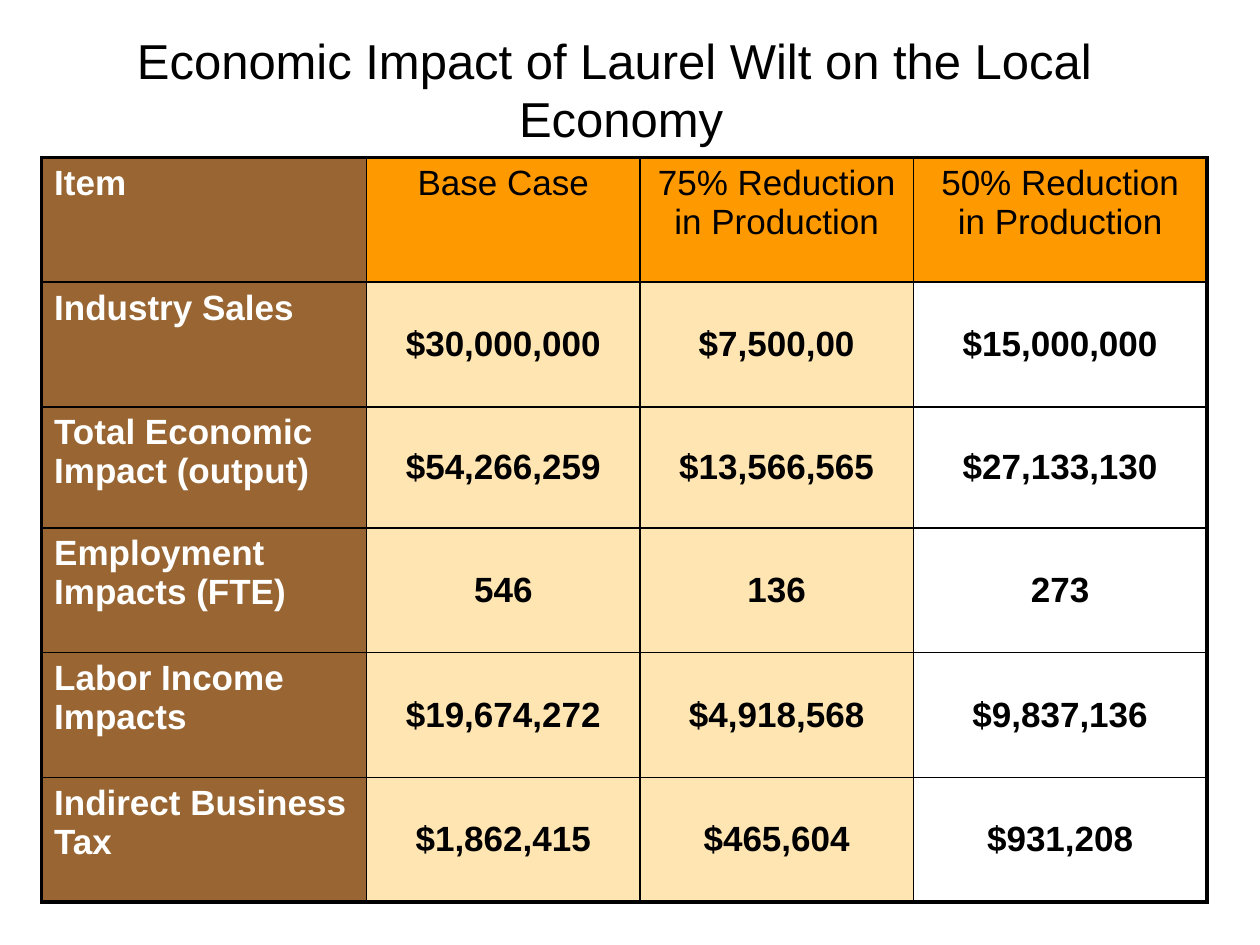
from lxml.etree import SubElement
from pptx import Presentation
from pptx.dml.color import RGBColor
from pptx.enum.text import MSO_ANCHOR, PP_ALIGN
from pptx.oxml.ns import qn
from pptx.util import Inches, Pt

# Content
TITLE_LINES = ["Economic Impact of Laurel Wilt on the Local", " Economy"]
ROWS = [
    ("Item", "Base Case", "75% Reduction in Production", "50% Reduction in Production"),
    ("Industry Sales", "$30,000,000", "$7,500,00", "$15,000,000"),
    ("Total Economic Impact (output)", "$54,266,259", "$13,566,565", "$27,133,130"),
    ("Employment Impacts (FTE)", "546", "136", "273"),
    ("Labor Income Impacts", "$19,674,272", "$4,918,568", "$9,837,136"),
    ("Indirect Business Tax", "$1,862,415", "$465,604", "$931,208"),
]

# Look and grid, in inches and points
COLORS = {"text": "000000", "label_text": "FFFFFF", "label": "996633",
          "header": "FF9900", "value": "FFCC66", "last": "FFFFFF", "border": "000000"}
FONT = "Arial"
TABLE_LEFT, TABLE_TOP = 0.33, 1.25
COLUMN_WIDTHS = [2.58, 2.17, 2.17, 2.33]
ROW_HEIGHTS = [0.99, 0.99, 0.96, 0.99, 0.99, 0.99]
INNER_LINE, OUTER_LINE = 1, 2.25


def add_span(para, text, size, color, bold=False):
    span = para.add_run()
    span.text = text
    span.font.name = FONT
    span.font.size = Pt(size)
    span.font.bold = bold
    span.font.color.rgb = RGBColor.from_string(COLORS[color])


def fill_cell(cell, color, opacity=None):
    cell.fill.solid()
    cell.fill.fore_color.rgb = RGBColor.from_string(COLORS[color])
    if opacity:
        color_node = cell._tc.tcPr.find(qn("a:solidFill"))[0]
        SubElement(color_node, qn("a:alpha"), val=str(opacity * 1000))


def border_cell(cell, outer_sides):
    properties = cell._tc.get_or_add_tcPr()
    for index, side in enumerate("LRTB"):
        width = OUTER_LINE if side in outer_sides else INNER_LINE
        line = SubElement(properties, qn("a:ln" + side), w=str(Pt(width)))
        fill = SubElement(line, qn("a:solidFill"))
        SubElement(fill, qn("a:srgbClr"), val=COLORS["border"])
        properties.insert(index, line)  # borders come before the fill


def add_title(page):
    box = page.shapes.add_textbox(0, Inches(0.08), Inches(9.75), Inches(1.25))
    frame = box.text_frame
    frame.word_wrap = True
    frame.vertical_anchor = MSO_ANCHOR.MIDDLE
    para = frame.paragraphs[0]
    para.alignment = PP_ALIGN.CENTER
    for index, text in enumerate(TITLE_LINES):
        if index:
            para.add_line_break()
        add_span(para, text, 28, "text")


def add_impact_table(page):
    table = page.shapes.add_table(
        len(ROWS), len(COLUMN_WIDTHS), Inches(TABLE_LEFT), Inches(TABLE_TOP),
        Inches(sum(COLUMN_WIDTHS)), Inches(sum(ROW_HEIGHTS))).table
    table.first_row = table.horz_banding = False
    for column, width in zip(table.columns, COLUMN_WIDTHS):
        column.width = Inches(width)
    for row, height in zip(table.rows, ROW_HEIGHTS):
        row.height = Inches(height)

    last_row, last_column = len(ROWS) - 1, len(COLUMN_WIDTHS) - 1
    for r, texts in enumerate(ROWS):
        for c, text in enumerate(texts):
            cell = table.cell(r, c)
            is_label, is_header = c == 0, r == 0 and c > 0
            para = cell.text_frame.paragraphs[0]
            add_span(para, text, 20, "label_text" if is_label else "text", not is_header)
            if not is_label:
                para.alignment = PP_ALIGN.CENTER
            if is_label:
                fill_cell(cell, "label")
            elif is_header:
                fill_cell(cell, "header")
            else:
                cell.vertical_anchor = MSO_ANCHOR.MIDDLE
                fill_cell(cell, "last" if c == last_column else "value", 50)
            edges = {"L": c == 0, "R": c == last_column, "T": r == 0, "B": r == last_row}
            border_cell(cell, [side for side, is_outer in edges.items() if is_outer])


def main():
    deck = Presentation()
    deck.slide_width, deck.slide_height = Inches(10), Inches(7.5)
    page = deck.slides.add_slide(deck.slide_layouts[6])
    add_title(page)
    add_impact_table(page)
    deck.save("out.pptx")


if __name__ == "__main__":
    main()
